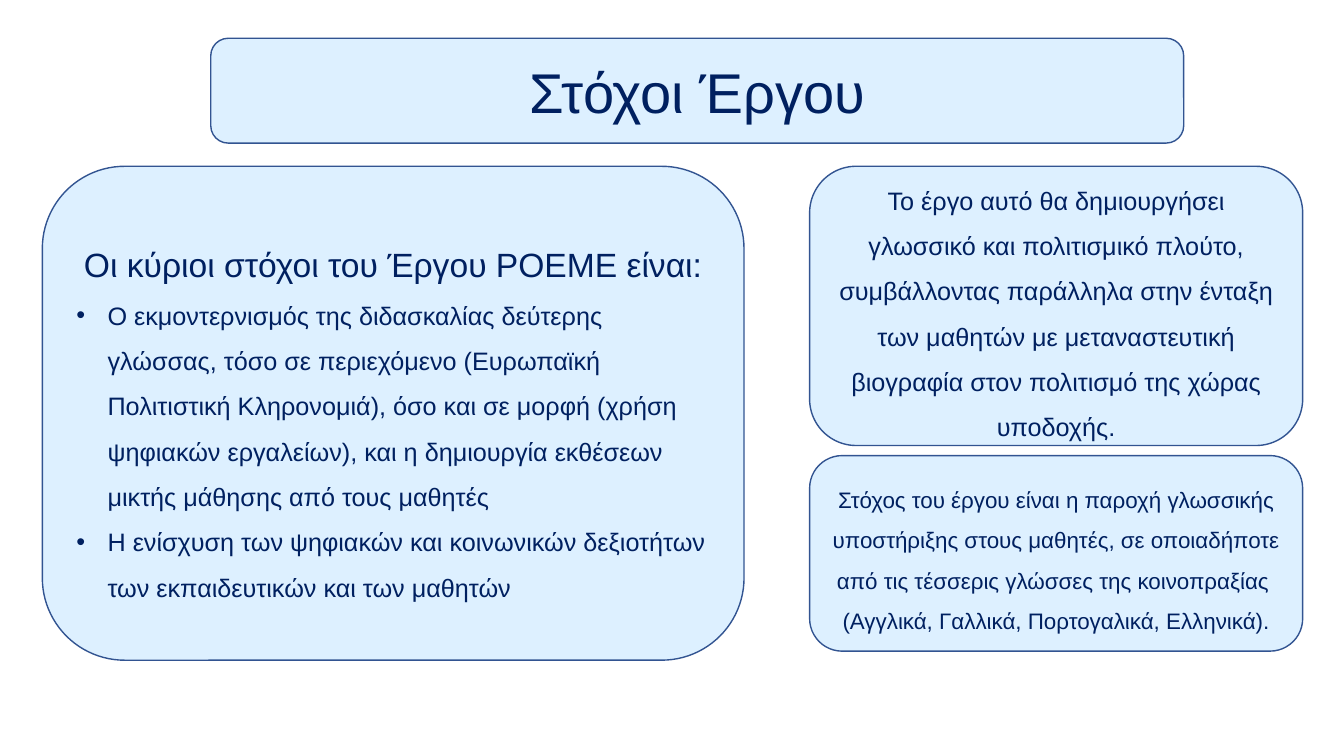
import pptx
import pptx.dml.color
import pptx.enum.shapes
import pptx.enum.text
import pptx.oxml
import pptx.oxml.ns
import pptx.util

Inches = pptx.util.Inches
COLOURS = {"panel": "DDF0FF", "outline": "325491", "text": "002060"}
FONT = "Arial"
CENTER = pptx.enum.text.PP_ALIGN.CENTER
LEFT = pptx.enum.text.PP_ALIGN.LEFT


class GoalsSlide:
    def __init__(self, presentation):
        self.slide = presentation.slides.add_slide(presentation.slide_layouts[5])

    def colour(self, name):
        return pptx.dml.color.RGBColor.from_string(COLOURS[name])

    def panel(self, left, top, width, height):
        shape = self.slide.shapes.add_shape(
            pptx.enum.shapes.MSO_SHAPE.ROUNDED_RECTANGLE,
            Inches(left), Inches(top), Inches(width), Inches(height))
        shape.shadow.inherit = False
        shape.fill.solid()
        shape.fill.fore_color.rgb = self.colour("panel")
        shape.line.color.rgb = self.colour("outline")
        shape.line.width = pptx.util.Pt(1)
        self.prepare_frame(shape.text_frame)
        return shape

    def prepare_frame(self, frame):
        frame.word_wrap = True
        frame.auto_size = pptx.enum.text.MSO_AUTO_SIZE.NONE
        frame.vertical_anchor = pptx.enum.text.MSO_ANCHOR.MIDDLE

    def add_text(self, paragraph, text, size, alignment=CENTER, line_spacing=1.5):
        paragraph.alignment = alignment
        paragraph.line_spacing = line_spacing
        run = paragraph.add_run()
        run.text = text
        run.font.name = FONT
        run.font.size = pptx.util.Pt(size)
        run.font.color.rgb = self.colour("text")

    def add_bullet(self, paragraph):
        properties = paragraph._p.get_or_add_pPr()
        properties.set("marL", str(Inches(0.31)))
        properties.set("indent", str(-Inches(0.31)))
        namespace = pptx.oxml.ns.nsdecls("a")
        for xml in (f'<a:buFont {namespace} typeface="{FONT}"/>',
                    f'<a:buChar {namespace} char="•"/>'):
            properties.append(pptx.oxml.parse_xml(xml))

    def title(self, text, left, top, width, height):
        """Put the title placeholder on top of a rounded panel."""
        self.panel(left, top, width, height)
        title = self.slide.shapes.title
        title.left, title.top = Inches(left), Inches(top)
        title.width, title.height = Inches(width), Inches(height)
        self.prepare_frame(title.text_frame)
        self.add_text(title.text_frame.paragraphs[0], text, 40, line_spacing=1.0)
        self.slide.shapes._spTree.append(title._element)

    def text_panel(self, box, paragraphs):
        """Fill a panel with (text, size, bulleted) paragraphs."""
        frame = self.panel(*box).text_frame
        for index, (text, size, bulleted) in enumerate(paragraphs):
            paragraph = frame.add_paragraph() if index else frame.paragraphs[0]
            if bulleted:
                self.add_bullet(paragraph)
            self.add_text(paragraph, text, size, LEFT if bulleted else CENTER)


def main():
    presentation = pptx.Presentation()
    presentation.slide_width = Inches(13.33)
    presentation.slide_height = Inches(7.5)
    goals = GoalsSlide(presentation)

    goals.text_panel((0.42, 1.65, 6.96, 4.9), [
        ("Οι κύριοι στόχοι του Έργου POEME είναι:", 24, False),
        ("Ο εκμοντερνισμός της διδασκαλίας δεύτερης γλώσσας, τόσο σε "
         "περιεχόμενο (Ευρωπαϊκή Πολιτιστική Κληρονομιά), όσο και σε μορφή "
         "(χρήση ψηφιακών εργαλείων), και η δημιουργία εκθέσεων μικτής "
         "μάθησης από τους μαθητές", 18, True),
        ("Η ενίσχυση των ψηφιακών και κοινωνικών δεξιοτήτων των "
         "εκπαιδευτικών και των μαθητών", 18, True),
    ])
    goals.title("Στόχοι Έργου", 2.09, 0.38, 9.65, 1.04)
    goals.text_panel((8.03, 1.65, 4.89, 2.77), [
        ("Το έργο αυτό θα δημιουργήσει γλωσσικό και πολιτισμικό πλούτο, "
         "συμβάλλοντας παράλληλα στην ένταξη των μαθητών με μεταναστευτική "
         "βιογραφία στον πολιτισμό της χώρας υποδοχής.", 18, False),
    ])
    goals.text_panel((8.03, 4.52, 4.89, 1.94), [
        ("Στόχος του έργου είναι η παροχή γλωσσικής υποστήριξης στους "
         "μαθητές, σε οποιαδήποτε από τις τέσσερις γλώσσες της "
         "κοινοπραξίας ", 16, False),
        ("(Αγγλικά, Γαλλικά, Πορτογαλικά, Ελληνικά).", 16, False),
    ])
    presentation.save("out.pptx")


if __name__ == "__main__":
    main()
